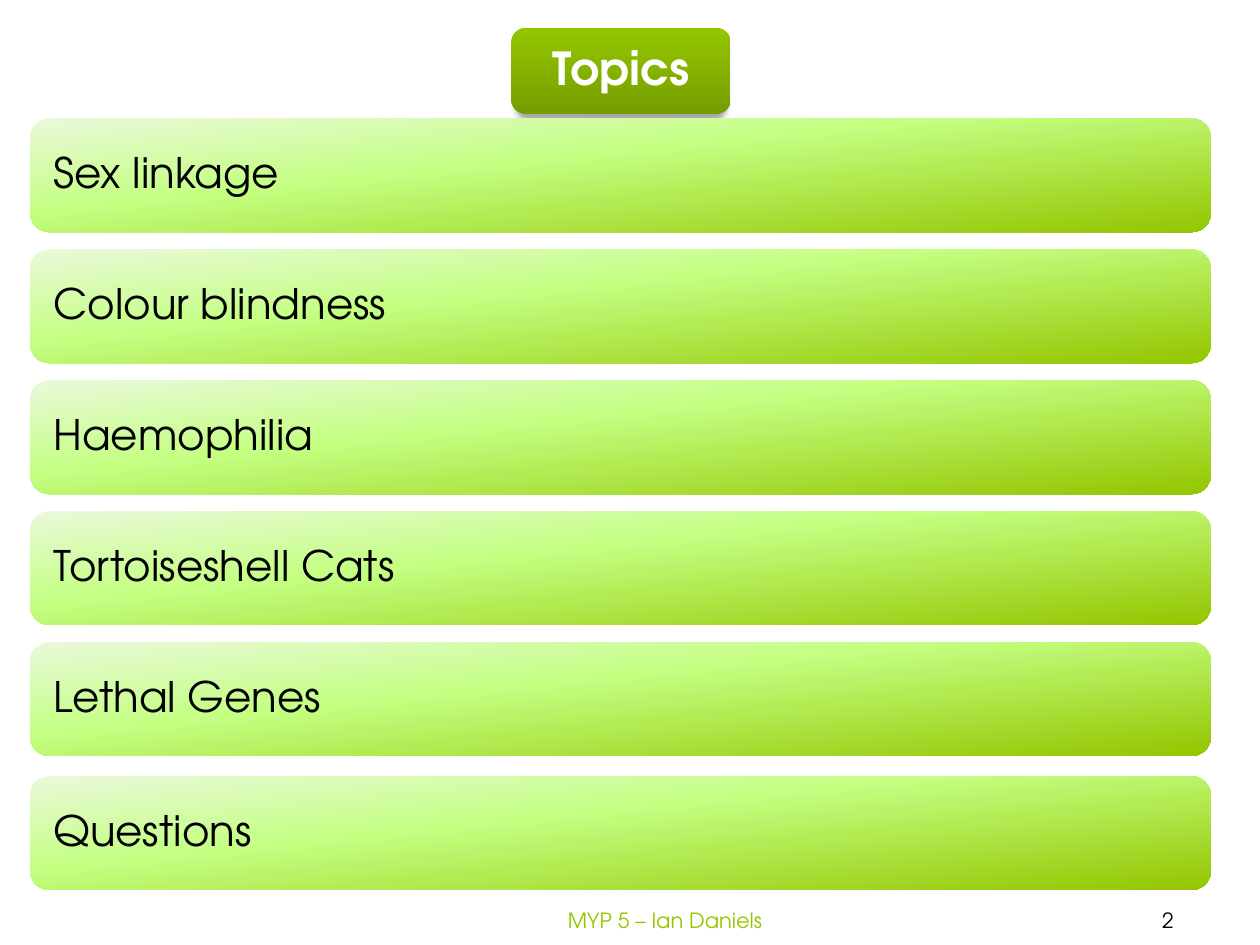
from lxml import etree
from pptx import Presentation
from pptx.dml.color import RGBColor
from pptx.enum.shapes import MSO_SHAPE
from pptx.enum.text import MSO_ANCHOR, MSO_AUTO_SIZE, PP_ALIGN
from pptx.oxml.ns import qn
from pptx.util import Cm, Pt

ROUND = MSO_SHAPE.ROUNDED_RECTANGLE
MIDDLE = MSO_ANCHOR.MIDDLE
FIXED = MSO_AUTO_SIZE.NONE
LEFT, CENTER, RIGHT = PP_ALIGN.LEFT, PP_ALIGN.CENTER, PP_ALIGN.RIGHT

FACE = "TeX Gyre Adventor"
BLACK = RGBColor(0x00, 0x00, 0x00)
WHITE = RGBColor(0xFF, 0xFF, 0xFF)
GREEN = RGBColor(0x94, 0xC6, 0x00)
OLIVE = RGBColor(0x76, 0x9D, 0x00)
LIME = RGBColor(0xC4, 0xFF, 0x82)
PALE = RGBColor(0xEA, 0xF9, 0xDA)

HEAD = {"size": Pt(26), "bold": True, "color": WHITE}
ITEM = {"size": Pt(24), "bold": False, "color": BLACK}
FOOT = {"size": Pt(12), "bold": False, "color": GREEN}
PAGE = {**FOOT, "color": BLACK}

TOPICS = ["Sex linkage", "Colour blindness", "Haemophilia",
          "Tortoiseshell Cats", "Lethal Genes", "Questions"]
TOP, STEP, LAST = 2.39, 2.64, 15.65


def set_text(shape, text, style, align, pad=0.25, spacing=1.0):
    frame = shape.text_frame
    frame.text = text
    layout = {"word_wrap": True, "auto_size": FIXED, "vertical_anchor": MIDDLE,
              "margin_left": Cm(pad), "margin_right": Cm(pad),
              "margin_top": Cm(0.13), "margin_bottom": Cm(0.13)}
    for key, value in layout.items():
        setattr(frame, key, value)
    para = frame.paragraphs[0]
    para.alignment = align
    para.line_spacing = spacing
    font = para.runs[0].font
    font.name = FACE
    for key, value in style.items():
        if key == "color":
            font.color.rgb = value
        else:
            setattr(font, key, value)


def add_panel(slide, box, stops, angle):
    """Add a borderless rounded box with a linear gradient of (percent, colour) stops."""
    panel = slide.shapes.add_shape(ROUND, *map(Cm, box))
    panel.shadow.inherit = False
    panel.line.fill.background()
    grad = etree.Element(qn("a:gradFill"), rotWithShape="1")
    steps = etree.SubElement(grad, qn("a:gsLst"))
    for place, color in stops:
        stop = etree.SubElement(steps, qn("a:gs"), pos=str(place * 1000))
        etree.SubElement(stop, qn("a:srgbClr"), val=str(color))
    etree.SubElement(grad, qn("a:lin"), ang=str(angle * 60000), scaled="0")
    panel.element.spPr.find(qn("a:prstGeom")).addnext(grad)
    return panel


def add_shadow(shape):
    effects = shape.element.spPr.find(qn("a:effectLst"))
    cast = etree.SubElement(effects, qn("a:outerShdw"), blurRad=str(Pt(3.5)),
                            dist=str(Pt(4)), dir="5400000", sx="96000", rotWithShape="0")
    color = etree.SubElement(cast, qn("a:srgbClr"), val=str(BLACK))
    etree.SubElement(color, qn("a:alpha"), val="34000")


def add_title(slide, text):
    box = (10.31, 0.56, 4.42, 1.73)
    plate = add_panel(slide, box, [(0, GREEN), (100, OLIVE)], 90)
    add_shadow(plate)
    title = slide.shapes.title
    for key, value in zip(("left", "top", "width", "height"), box):
        setattr(title, key, Cm(value))
    set_text(title, text, HEAD, CENTER, spacing=0.9)
    plate.element.addnext(title.element)


def add_bar(slide, top, text):
    stops = [(0, PALE), (40, LIME), (100, GREEN)]
    bar = add_panel(slide, (0.61, top, 23.8, 2.29), stops, 84)
    set_text(bar, text, ITEM, LEFT, pad=0.36, spacing=0.9)


def add_label(slide, left, width, text, style, align):
    label = slide.shapes.add_textbox(Cm(left), Cm(18.03), Cm(width), Cm(1.02))
    set_text(label, text, style, align)


def main():
    deck = Presentation()
    deck.slide_width, deck.slide_height = Cm(25.4), Cm(19.05)
    slide = deck.slides.add_slide(deck.slide_layouts[5])
    add_label(slide, 21.69, 3.71, "2", PAGE, CENTER)
    add_label(slide, 9.3, 6.32, "MYP 5 – Ian Daniels", FOOT, RIGHT)
    add_title(slide, "Topics")
    tops = [TOP + STEP * row for row in range(len(TOPICS) - 1)] + [LAST]
    for top, topic in zip(tops, TOPICS):
        add_bar(slide, top, topic)
    deck.save("out.pptx")


if __name__ == "__main__":
    main()
